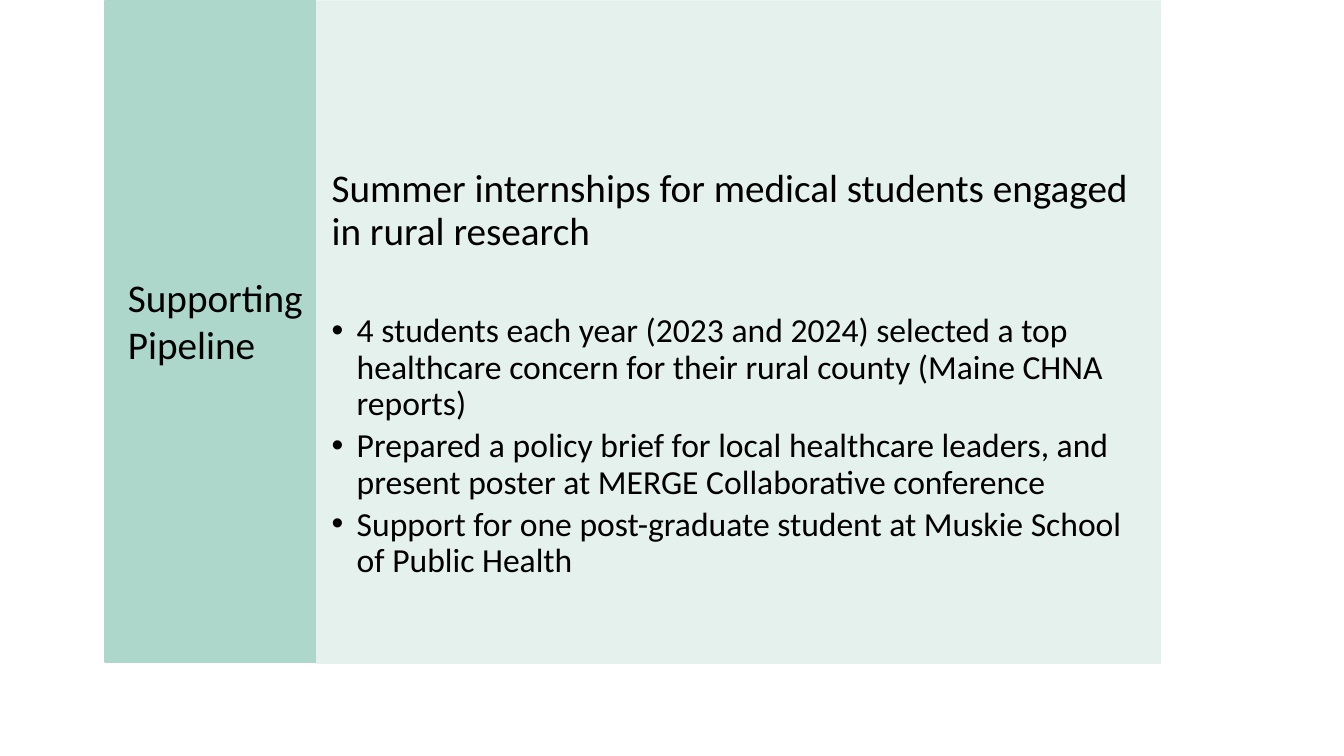
from dataclasses import dataclass

from lxml import etree
from pptx import Presentation
from pptx import util as u
from pptx.dml.color import RGBColor
from pptx.enum import shapes, text
from pptx.oxml.ns import qn


@dataclass
class Theme:
    font: str = "Calibri"
    ink: str = "000000"
    panel: str = "E3F0EC"
    strip: str = "ACD7CA"
    heading_size: int = 28
    bullet_size: int = 24
    bullet_indent: int = 18


class SlideBuilder:
    def __init__(self, slide, theme):
        self.slide = slide
        self.theme = theme

    def block(self, box, color, opacity=100):
        """Add a plain colour block behind the placeholders."""
        block = self.slide.shapes.add_shape(
            shapes.MSO_SHAPE.RECTANGLE, *map(u.Pt, box))
        block.shadow.inherit = False
        block.fill.solid()
        block.line.fill.solid()
        block.line.width = u.Pt(1)
        for fill in (block.fill, block.line.fill):
            fill.fore_color.rgb = RGBColor.from_string(color)
        if opacity < 100:
            for srgb in list(block.element.spPr.iter(qn("a:srgbClr"))):
                etree.SubElement(srgb, qn("a:alpha"), val=str(opacity * 1000))
        self.slide.shapes.title.element.addprevious(block.element)

    def frame(self, placeholder, box, **settings):
        """Move a placeholder and format its text frame."""
        for name, length in zip(("left", "top", "width", "height"), box):
            setattr(placeholder, name, u.Pt(length))
        for name, value in settings.items():
            setattr(placeholder.text_frame, name, value)
        return placeholder.text_frame

    def line_of_text(self, paragraph, words, size, bullet=False, **settings):
        """Fill one paragraph, with or without a bullet."""
        indent = u.Pt(self.theme.bullet_indent if bullet else 0)
        props = paragraph._p.get_or_add_pPr()
        props.set("marL", str(int(indent)))
        props.set("indent", str(-int(indent)))
        if bullet:
            etree.SubElement(props, qn("a:buChar"), char="•")
        else:
            etree.SubElement(props, qn("a:buNone"))
        layout = {"alignment": text.PP_ALIGN.LEFT, "space_before": u.Pt(0)}
        for name, value in {**layout, **settings}.items():
            setattr(paragraph, name, value)
        run = paragraph.add_run()
        run.text = words
        for name, value in {"name": self.theme.font, "size": u.Pt(size)}.items():
            setattr(run.font, name, value)
        run.font.color.rgb = RGBColor.from_string(self.theme.ink)


def main():
    deck = Presentation()
    deck.slide_width, deck.slide_height = u.Pt(960), u.Pt(540)
    theme = Theme()
    slide = deck.slides.add_slide(deck.slide_layouts[1])
    builder = SlideBuilder(slide, theme)

    # Colour blocks
    panel_box = (225.4, 0.7, 603.4, 473)
    builder.block(panel_box, theme.panel, opacity=90)
    builder.block((74.9, 0.7, 150.5, 472.3), theme.strip)

    # Topic on the left strip
    topic = builder.frame(
        slide.shapes.title, (84.2, 191.5, 141.1, 74.9), word_wrap=False,
        auto_size=text.MSO_AUTO_SIZE.SHAPE_TO_FIT_TEXT,
        vertical_anchor=text.MSO_ANCHOR.TOP)
    builder.line_of_text(topic.paragraphs[0], "Supporting", theme.heading_size)
    builder.line_of_text(topic.add_paragraph(), "Pipeline", theme.heading_size)

    # Internship programme on the panel
    programme = builder.frame(
        slide.placeholders[1], panel_box, word_wrap=True,
        auto_size=text.MSO_AUTO_SIZE.NONE,
        vertical_anchor=text.MSO_ANCHOR.TOP,
        margin_left=u.Pt(11.4), margin_right=u.Pt(11.4),
        margin_top=u.Pt(120), margin_bottom=u.Pt(0))
    builder.line_of_text(
        programme.paragraphs[0],
        "Summer internships for medical students engaged in rural research",
        theme.heading_size, line_spacing=0.9, space_after=u.Pt(43))
    for activity in (
        "4 students each year (2023 and 2024) selected a top healthcare "
        "concern for their rural county (Maine CHNA reports)",
        "Prepared a policy brief for local healthcare leaders, and present "
        "poster at MERGE Collaborative conference",
        "Support for one post-graduate student at Muskie School of Public "
        "Health",
    ):
        builder.line_of_text(
            programme.add_paragraph(), activity, theme.bullet_size,
            bullet=True, level=1, line_spacing=0.9, space_after=u.Pt(4.3))

    deck.save("out.pptx")


if __name__ == "__main__":
    main()
